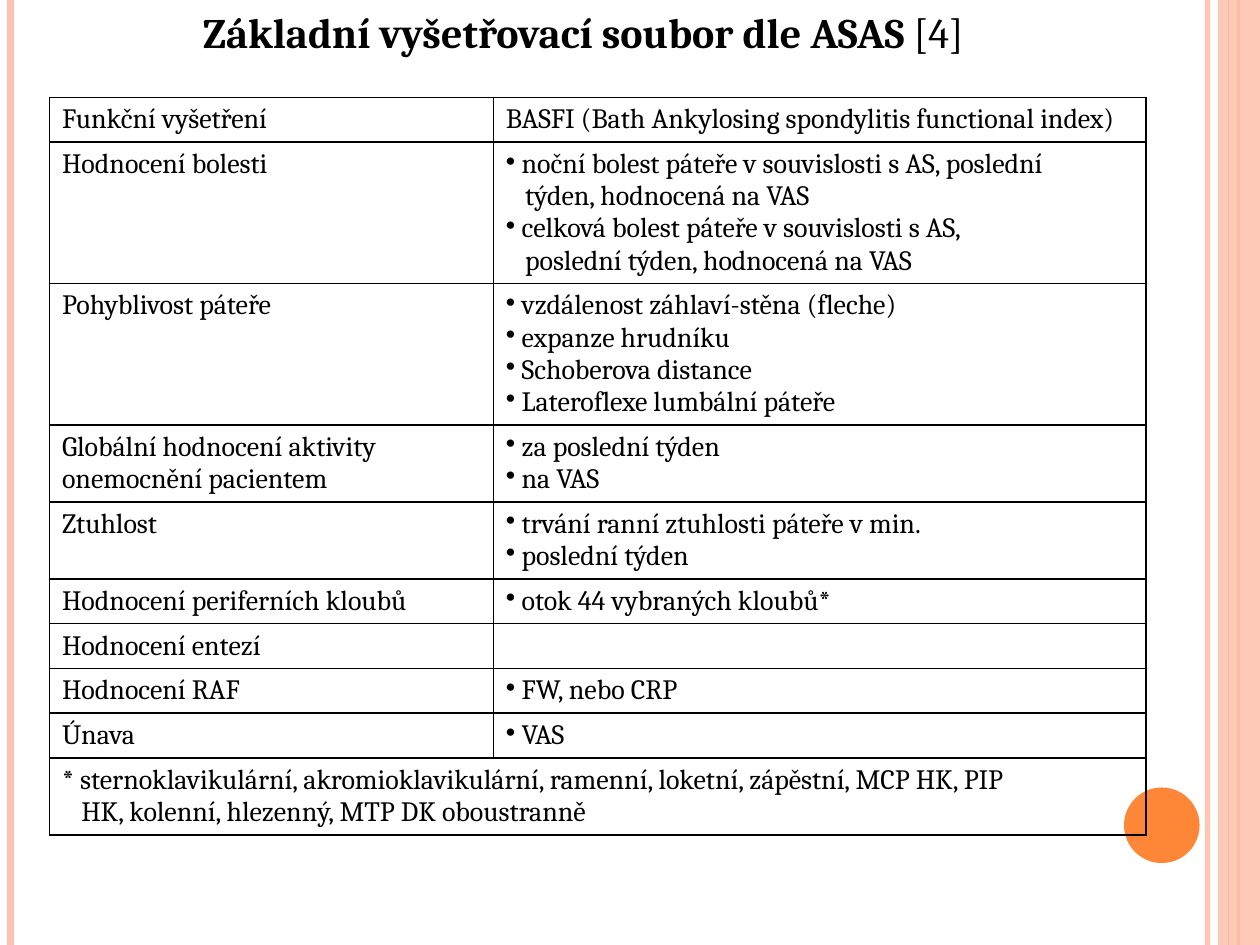
from lxml import etree
from pptx import Presentation
from pptx.dml.color import RGBColor
from pptx.enum.shapes import MSO_CONNECTOR, MSO_SHAPE
from pptx.enum.text import MSO_ANCHOR, PP_ALIGN
from pptx.oxml.ns import qn
from pptx.util import Pt

STRAIGHT = MSO_CONNECTOR.STRAIGHT
RECTANGLE, OVAL = MSO_SHAPE.RECTANGLE, MSO_SHAPE.OVAL
LEFT, MIDDLE = PP_ALIGN.LEFT, MSO_ANCHOR.MIDDLE

COLORS = {"text": "000000", "orange": "FE8637", "peach": "FEC3AE"}
FONT = "Cambria"
WIDTH, HEIGHT = 720, 540
LINE_HEIGHT, CELL_PADDING = 18.4, 7.2


def paint(color_format, name, opacity=100):
    color_format.rgb = RGBColor.from_string(COLORS[name])
    if opacity < 100:
        color = color_format._xFill.find(qn("a:srgbClr"))
        etree.SubElement(color, qn("a:alpha"), val=str(opacity * 1000))


def add_span(para, text, size, bold=False):
    span = para.add_run()
    span.text = text
    for name, value in {"name": FONT, "size": Pt(size), "bold": bold}.items():
        setattr(span.font, name, value)
    paint(span.font.color, "text")


deck = Presentation()
deck.slide_width, deck.slide_height = Pt(WIDTH), Pt(HEIGHT)
page = deck.slides.add_slide(deck.slide_layouts[5])

# Vertical stripes: x, weight, colour, opacity
stripes = [
    (690, 3, "peach", 93),
    (6, 4.5, "peach", 100),
    (707.6, 1.5, "orange", 100),
    (702, 0.75, "orange", 100),
]
for x, weight, color, opacity in stripes:
    stripe = page.shapes.add_connector(STRAIGHT, Pt(x), 0, Pt(x), Pt(HEIGHT))
    stripe.line.width = Pt(weight)
    stripe.line.fill.solid()
    paint(stripe.line.fill.fore_color, color, opacity)
    etree.SubElement(stripe._element.spPr, qn("a:effectLst"))

# Side band and circle
decorations = [
    (RECTANGLE, (696, 0, 24, HEIGHT), "peach", 87),
    (OVAL, (642.3, 450, 43.2, 43.2), "orange", 100),
]
for kind, bounds, color, opacity in decorations:
    shape = page.shapes.add_shape(kind, *map(Pt, bounds))
    shape.shadow.inherit = False
    shape.line.fill.background()
    shape.fill.solid()
    paint(shape.fill.fore_color, color, opacity)

# Title
title = page.shapes.title
title_bounds = {"left": 108.7, "top": 0, "width": 530.6, "height": 36}
for name, value in title_bounds.items():
    setattr(title, name, Pt(value))
frame = title.text_frame
frame.word_wrap = True
frame.vertical_anchor = MIDDLE
para = frame.paragraphs[0]
para.alignment = LEFT
add_span(para, "Základní vyšetřovací soubor dle ASAS ", 24, bold=True)
add_span(para, "[4]", 24)

# Table content: a leading "•" marks a bullet, a leading ">" its second line
rows = [
    ("Funkční vyšetření", ["BASFI (Bath Ankylosing spondylitis functional index)"]),
    ("Hodnocení bolesti", [
        "•noční bolest páteře v souvislosti s AS, poslední",
        ">týden, hodnocená na VAS",
        "•celková bolest páteře v souvislosti s AS,",
        ">poslední týden, hodnocená na VAS",
    ]),
    ("Pohyblivost páteře", [
        "•vzdálenost záhlaví-stěna (fleche)",
        "•expanze hrudníku",
        "•Schoberova distance",
        "•Lateroflexe lumbální páteře",
    ]),
    ("Globální hodnocení aktivity onemocnění pacientem",
     ["•za poslední týden", "•na VAS"]),
    ("Ztuhlost", ["•trvání ranní ztuhlosti páteře v min.", "•poslední týden"]),
    ("Hodnocení periferních kloubů", ["•otok 44 vybraných kloubů*"]),
    ("Hodnocení entezí", [""]),
    ("Hodnocení RAF", ["•FW, nebo CRP"]),
    ("Únava", ["•VAS"]),
    ("*sternoklavikulární, akromioklavikulární, ramenní, loketní, zápěstní, MCP HK, PIP",
     [">HK, kolenní, hlezenný, MTP DK oboustranně"]),
]
# Left margin and first-line indent by marker
indents = {"•": (9, -9), ">": (11, 0), "*": (11, -11)}
column_widths = (253.6, 373)
row_heights = [LINE_HEIGHT * len(lines) + CELL_PADDING for _, lines in rows]
row_heights[-1] += LINE_HEIGHT

table = page.shapes.add_table(
    len(rows), 2, Pt(28.3), Pt(55.6), Pt(sum(column_widths)), Pt(sum(row_heights))
).table
table.first_row = table.horz_banding = False
for column, width in zip(table.columns, column_widths):
    column.width = Pt(width)
for row, height in zip(table.rows, row_heights):
    row.height = Pt(height)
last = len(rows) - 1
table.cell(last, 0).merge(table.cell(last, 1))

for row_index, (label, lines) in enumerate(rows):
    # The footnote row is one merged cell
    contents = [[label] + lines, [""]] if row_index == last else [[label], lines]
    for column_index, texts in enumerate(contents):
        cell = table.cell(row_index, column_index)
        frame = cell.text_frame
        for index, text in enumerate(texts):
            para = frame.add_paragraph() if index else frame.paragraphs[0]
            marker = text[:1]
            if marker in indents:
                margin, indent = indents[marker]
                properties = para._p.get_or_add_pPr()
                properties.set("marL", str(Pt(margin)))
                properties.set("indent", str(Pt(indent)))
                text = "* " + text[1:] if marker == "*" else text[1:]
                if marker == "•":
                    etree.SubElement(properties, qn("a:buChar"), char=marker)
            if text:
                add_span(para, text, 16)
            else:
                ending = etree.SubElement(para._p, qn("a:endParaRPr"), sz="1600")
                etree.SubElement(ending, qn("a:latin"), typeface=FONT)

        # Borders come before the fill in the cell properties
        cell_properties = cell._tc.get_or_add_tcPr()
        for side in ("lnL", "lnR", "lnT", "lnB"):
            border = etree.SubElement(cell_properties, qn(f"a:{side}"), w=str(Pt(1)))
            fill = etree.SubElement(border, qn("a:solidFill"))
            etree.SubElement(fill, qn("a:srgbClr"), val=COLORS["text"])
        cell.fill.background()

deck.save("out.pptx")
